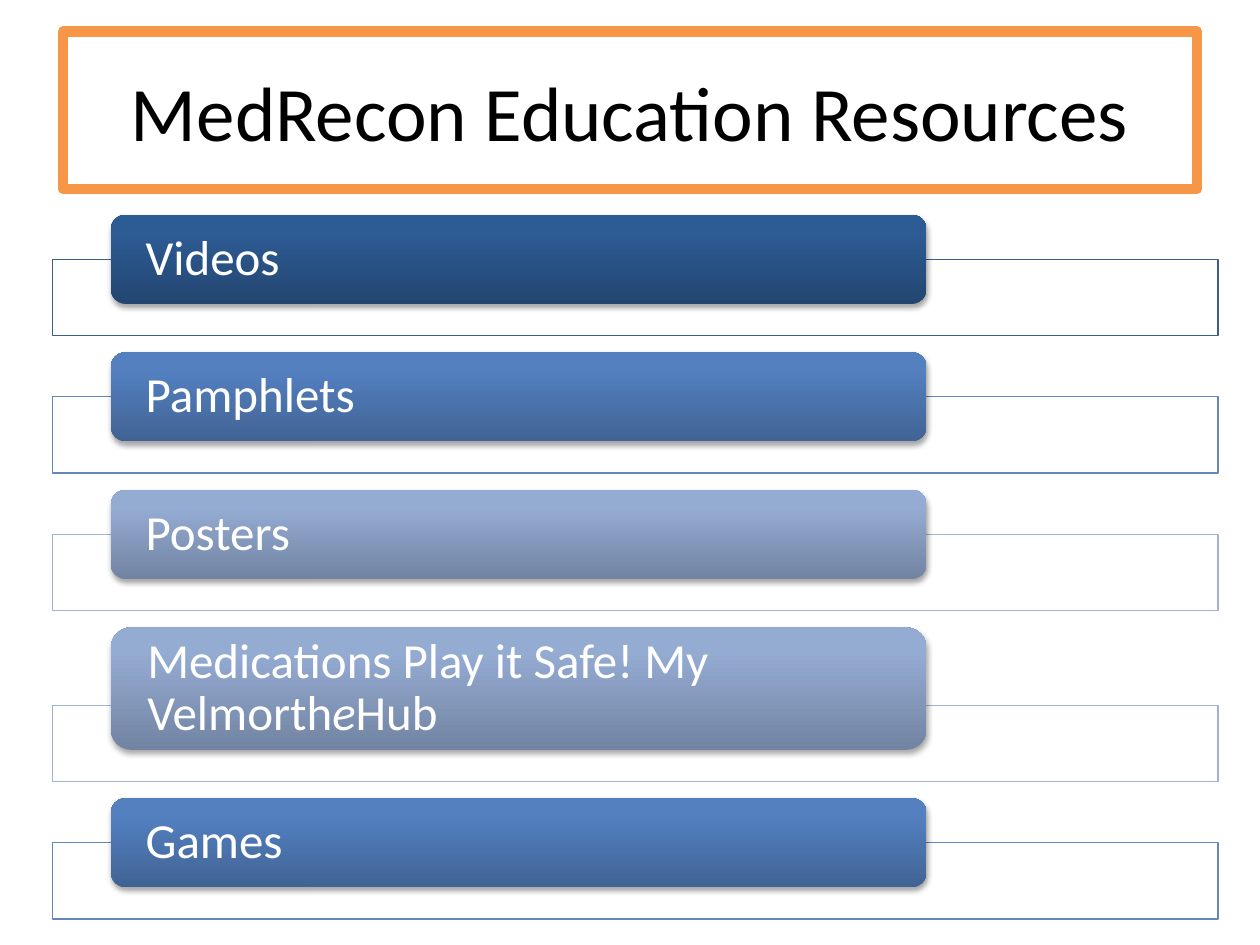
from lxml.etree import SubElement
from pptx import Presentation
from pptx.dml.color import RGBColor
from pptx.enum.shapes import MSO_SHAPE
from pptx.enum.text import MSO_ANCHOR, PP_ALIGN
from pptx.oxml import parse_xml
from pptx.oxml.ns import nsdecls, qn
from pptx.util import Pt

FONT = "Calibri"
WHITE = RGBColor(0xFF, 0xFF, 0xFF)
BLACK = RGBColor(0x00, 0x00, 0x00)
ORANGE = RGBColor(0xF7, 0x96, 0x46)
NAVY_LINE = RGBColor(0x3A, 0x5F, 0x8C)
BLUE_LINE = RGBColor(0x63, 0x87, 0xB9)
PALE_LINE = RGBColor(0xA0, 0xB3, 0xD1)
NAVY = (RGBColor(0x23, 0x46, 0x71), RGBColor(0x2D, 0x5B, 0x93), RGBColor(0x2B, 0x5C, 0x96))
BLUE = (RGBColor(0x40, 0x63, 0x94), RGBColor(0x54, 0x80, 0xC0), RGBColor(0x52, 0x81, 0xC3))
PALE = (RGBColor(0x72, 0x84, 0xA2), RGBColor(0x94, 0xAB, 0xD2), RGBColor(0x94, 0xAC, 0xD4))

BAR_HEIGHT = 51
TALL_BAR_HEIGHT = 70
PANEL_HEIGHT = 43.6
OVERLAP = 25.5
ROW_GAP = 9.5

RESOURCES = [
    ([("Videos", False)], BAR_HEIGHT, NAVY, NAVY_LINE),
    ([("Pamphlets", False)], BAR_HEIGHT, BLUE, BLUE_LINE),
    ([("Posters", False)], BAR_HEIGHT, PALE, PALE_LINE),
    (
        [("Medications Play it Safe! My Velmorth", False), ("e", True), ("Hub", False)],
        TALL_BAR_HEIGHT,
        PALE,
        PALE_LINE,
    ),
    ([("Games", False)], BAR_HEIGHT, BLUE, BLUE_LINE),
]


def add_box(slide, kind, left, top, width, height):
    """Add a white preset shape without a shadow."""
    shape = slide.shapes.add_shape(kind, Pt(left), Pt(top), Pt(width), Pt(height))
    shape.fill.solid()
    shape.fill.fore_color.rgb = WHITE
    shape.shadow.inherit = False
    return shape


def set_outline(shape, color, width):
    """Give a shape a solid outline."""
    shape.line.color.rgb = color
    shape.line.width = Pt(width)


def set_gradient(shape, colors):
    """Fill a shape with three colours running from bottom to top."""
    shape.fill.gradient()
    gradient = shape._element.spPr.find(qn("a:gradFill"))
    for child in list(gradient):
        gradient.remove(child)
    stops = SubElement(gradient, qn("a:gsLst"))
    for position, color in zip((0, 80000, 100000), colors):
        stop = SubElement(stops, qn("a:gs"), pos=str(position))
        SubElement(stop, qn("a:srgbClr"), val=str(color))
    SubElement(gradient, qn("a:lin"), ang="16200000", scaled="0")


def set_shadow(shape):
    """Give a shape a soft shadow below it."""
    effects = shape._element.spPr.find(qn("a:effectLst"))
    effects.append(parse_xml(
        f'<a:outerShdw {nsdecls("a")} blurRad="{Pt(3.1)}" dist="{Pt(1.8)}" '
        'dir="5400000" rotWithShape="0"><a:srgbClr val="000000">'
        '<a:alpha val="35000"/></a:srgbClr></a:outerShdw>'
    ))


def write_text(shape, runs, size, color, alignment):
    """Write one paragraph run by run, centred vertically in a shape."""
    frame = shape.text_frame
    frame.word_wrap = True
    frame.vertical_anchor = MSO_ANCHOR.MIDDLE
    paragraph = frame.paragraphs[0]
    paragraph.alignment = alignment
    for text, italic in runs:
        run = paragraph.add_run()
        run.text = text
        run.font.name = FONT
        run.font.size = Pt(size)
        run.font.italic = italic
        run.font.color.rgb = color
    return frame


def add_title(slide, left, top, width, height):
    """Place the framed slide title in the given box."""
    title = add_box(slide, MSO_SHAPE.RECTANGLE, left, top, width, height)
    set_outline(title, ORANGE, 6)
    SubElement(title._element.spPr.find(qn("a:ln")), qn("a:round"))
    write_text(title, [("MedRecon Education Resources", False)], 44, BLACK, PP_ALIGN.CENTER)


def add_resource(slide, left, top, width, runs, bar_height, gradient, outline):
    """Place one resource bar over its panel and return the panel's bottom."""
    panel_top = top + bar_height - OVERLAP
    panel = add_box(slide, MSO_SHAPE.RECTANGLE, left, panel_top, width, PANEL_HEIGHT)
    set_outline(panel, outline, 0.75)
    bar = add_box(
        slide, MSO_SHAPE.ROUNDED_RECTANGLE, left + width * 0.05, top, width * 0.7, bar_height
    )
    set_gradient(bar, gradient)
    bar.line.fill.background()
    set_shadow(bar)
    frame = write_text(bar, runs, 28, WHITE, PP_ALIGN.LEFT)
    frame.margin_left = frame.margin_right = Pt(17.5)
    frame.margin_top = frame.margin_bottom = Pt(0)
    frame.paragraphs[0].line_spacing = 0.9
    return panel_top + PANEL_HEIGHT


def add_resource_list(slide, left, top, width):
    """Stack the resource rows downwards with equal gaps."""
    for resource in RESOURCES:
        top = add_resource(slide, left, top, width, *resource) + ROW_GAP


def main():
    """Build the slide and save the presentation."""
    presentation = Presentation()
    presentation.slide_width = Pt(720)
    presentation.slide_height = Pt(540)
    slide = presentation.slides.add_slide(presentation.slide_layouts[6])
    add_title(slide, 36, 18, 648, 90)
    add_resource_list(slide, 30, 122.7, 666)
    presentation.save("out.pptx")


if __name__ == "__main__":
    main()
